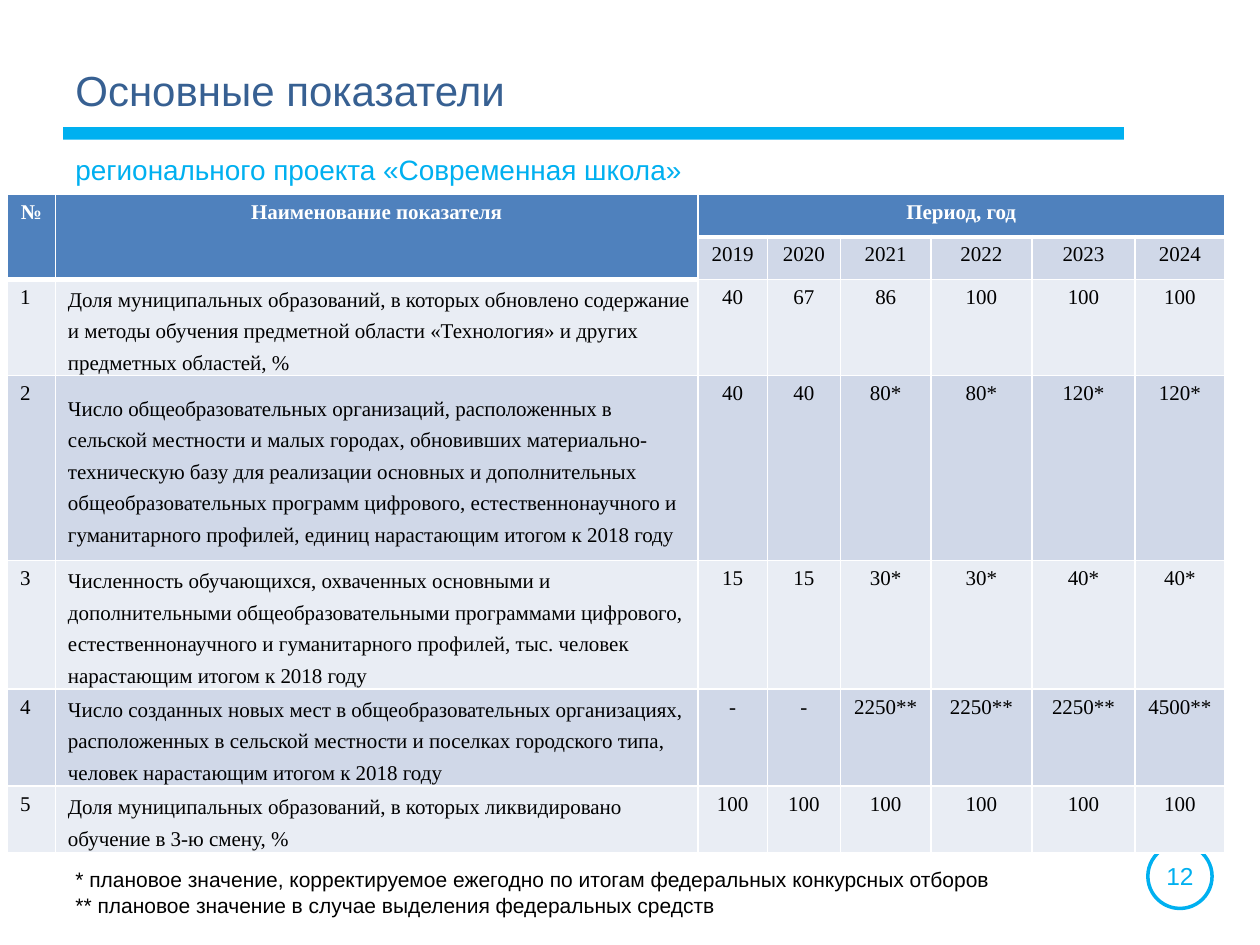
from lxml import etree
from pptx import Presentation
from pptx import util as u
from pptx.dml.color import RGBColor
from pptx.enum import shapes, text
from pptx.oxml.ns import qn

SKY, NAVY, BLUE = "00B0F0", "376092", "4F81BD"
WHITE, BLACK = "FFFFFF", "000000"
BANDS = ("E9EDF4", "D0D8E8")
COLUMNS = (0.38, 5.1, 0.55, 0.58, 0.72, 0.8, 0.82, 0.71)
ROWS = (0.34, 0.34, 0.76, 1.47, 1.02, 0.77, 0.53)
YEARS = range(2019, 2025)
INDICATORS = (
    ("Доля муниципальных образований, в которых обновлено содержание и методы обучения "
     "предметной области «Технология» и других предметных областей, %",
     ("40", "67", "86", "100", "100", "100")),
    ("Число общеобразовательных организаций, расположенных в сельской местности и малых "
     "городах, обновивших материально-техническую базу для реализации основных и "
     "дополнительных общеобразовательных программ цифрового, естественнонаучного и "
     "гуманитарного профилей, единиц нарастающим итогом к 2018 году",
     ("40", "40", "80*", "80*", "120*", "120*")),
    ("Численность обучающихся, охваченных основными и дополнительными "
     "общеобразовательными программами цифрового, естественнонаучного и гуманитарного "
     "профилей, тыс. человек нарастающим итогом к 2018 году",
     ("15", "15", "30*", "30*", "40*", "40*")),
    ("Число созданных новых мест в общеобразовательных организациях, расположенных в "
     "сельской местности и поселках городского типа, человек нарастающим итогом к 2018 году",
     ("-", "-", "2250**", "2250**", "2250**", "4500**")),
    ("Доля муниципальных образований, в которых ликвидировано обучение в 3-ю смену, %",
     ("100",) * 6),
)
FOOTNOTES = (
    "* плановое значение, корректируемое ежегодно по итогам федеральных конкурсных отборов\n"
    "** плановое значение в случае выделения федеральных средств"
)


def colour(value):
    return RGBColor.from_string(value)


def inches(box):
    return [u.Inches(length) for length in box]


def style(frame, size, font, tint, align=text.PP_ALIGN.LEFT, bold=False):
    for para in frame.paragraphs:
        para.alignment = align
        for span in para.runs:
            span.font.size = u.Pt(size)
            span.font.name = font
            span.font.bold = bold
            span.font.color.rgb = colour(tint)


def add_label(page, box, words, size, tint, align=text.PP_ALIGN.LEFT, top=0.06):
    frame = page.shapes.add_textbox(*inches(box)).text_frame
    frame.word_wrap = True
    frame.margin_top = u.Inches(top)
    frame.text = words
    style(frame, size, "Arial", tint, align)


def add_heading(page, box):
    """Title above a bar, subtitle below it."""
    left, top, width, height = box
    bar = page.shapes.add_shape(shapes.MSO_SHAPE.RECTANGLE,
                                *inches((left, top + 0.58, width, 0.1)))
    bar.shadow.inherit = False
    bar.fill.solid()
    bar.fill.fore_color.rgb = colour(SKY)
    bar.line.fill.background()
    add_label(page, (left, top + 0.72, width, height - 0.72),
              "регионального проекта «Современная школа»", 16, SKY)
    add_label(page, (left, top, width, 0.64), "Основные показатели", 24, NAVY, top=0.08)


def add_page_number(page, box):
    left, top, width, height = box
    ring = page.shapes.add_shape(shapes.MSO_SHAPE.OVAL, *inches(box))
    ring.shadow.inherit = False
    ring.fill.background()
    ring.line.color.rgb = colour(SKY)
    ring.line.width = u.Pt(2)
    add_label(page, (left - 0.03, top + 0.07, width + 0.06, 0.34), "12", 14, SKY,
              text.PP_ALIGN.CENTER)


def paint_cell(cell, fill, bottom):
    """White borders first, then the fill, as the schema orders them."""
    properties = cell._tc.get_or_add_tcPr()
    for side, points in (("L", 1), ("R", 1), ("T", 1), ("B", bottom)):
        line = etree.SubElement(properties, qn("a:ln" + side), w=str(u.Pt(points)))
        solid = etree.SubElement(line, qn("a:solidFill"))
        etree.SubElement(solid, qn("a:srgbClr"), val=WHITE)
    cell.fill.solid()
    cell.fill.fore_color.rgb = colour(fill)


def format_description(cell):
    cell.vertical_anchor = text.MSO_ANCHOR.MIDDLE
    cell.margin_left = cell.margin_right = u.Inches(0.02)
    cell.margin_top = cell.margin_bottom = 0
    para = cell.text_frame.paragraphs[0]
    para.line_spacing = u.Pt(18)
    para._p.get_or_add_pPr().set("marL", str(u.Inches(0.08)))


def add_indicator_table(page, box):
    table = page.shapes.add_table(len(ROWS), len(COLUMNS), *inches(box)).table
    for column, width in zip(table.columns, COLUMNS):
        column.width = u.Inches(width)
    for row, height in zip(table.rows, ROWS):
        row.height = u.Inches(height)

    content = [("№", "Наименование показателя", "Период, год") + ("",) * 5,
               ("", "") + tuple(str(year) for year in YEARS)]
    content += [(str(number), name) + values
                for number, (name, values) in enumerate(INDICATORS, 1)]
    for r, words in enumerate(content):
        for c, word in enumerate(words):
            cell = table.cell(r, c)
            header = r == 0 or (r == 1 and c < 2)
            paint_cell(cell, BLUE if header else BANDS[r % 2], 3 if header else 1)
            cell.text = word
            align = text.PP_ALIGN.LEFT if r > 1 and c < 2 else text.PP_ALIGN.CENTER
            style(cell.text_frame, 12, "Times New Roman", WHITE if header else BLACK,
                  align, header)
            if r > 1 and c == 1:
                format_description(cell)
    for c in range(2):
        table.cell(0, c).merge(table.cell(1, c))
    table.cell(0, 2).merge(table.cell(0, len(COLUMNS) - 1))


def main():
    deck = Presentation()
    deck.slide_width, deck.slide_height = inches((10, 7.5))
    page = deck.slides.add_slide(deck.slide_layouts[6])
    add_page_number(page, (9.11, 6.7, 0.51, 0.51))
    add_heading(page, (0.5, 0.43, 8.42, 1.21))
    add_label(page, (0.5, 6.82, 8.39, 0.64), FOOTNOTES, 12, BLACK)
    add_indicator_table(page, (0.06, 1.54, sum(COLUMNS), sum(ROWS)))
    deck.save("out.pptx")


if __name__ == "__main__":
    main()
